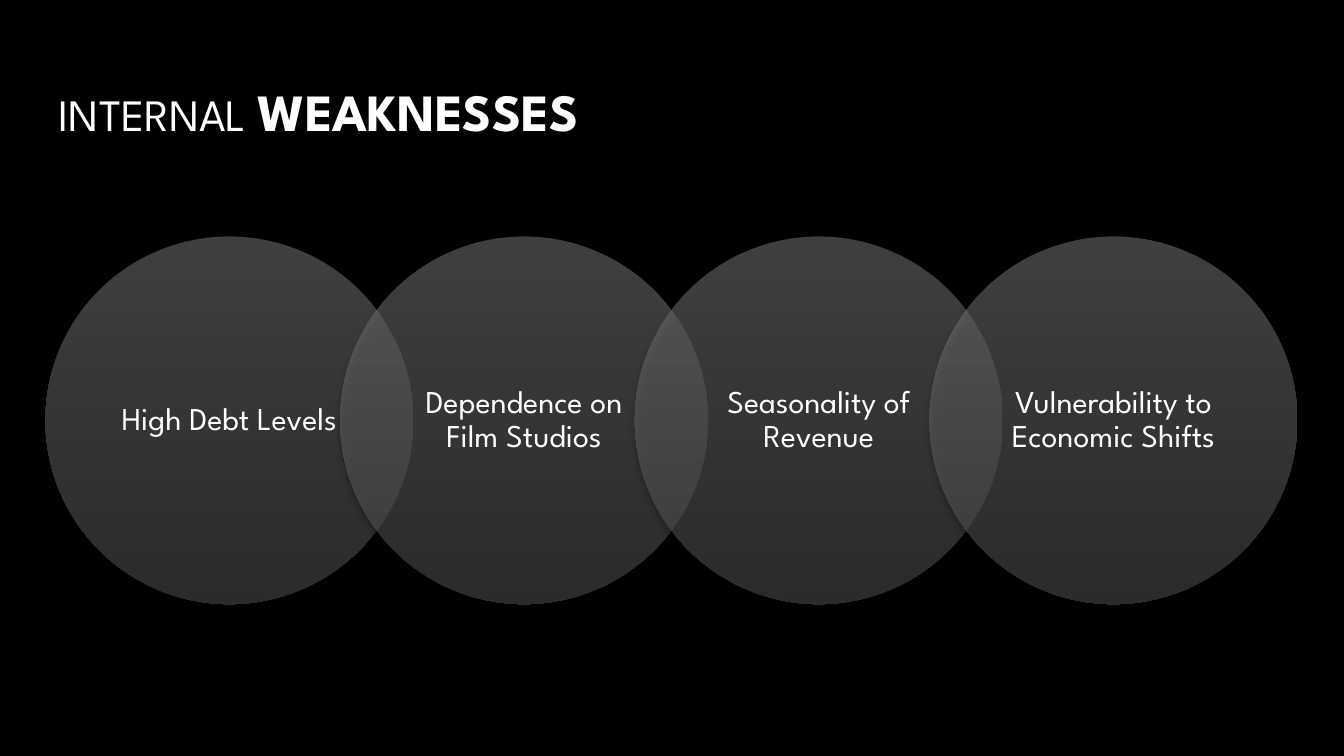
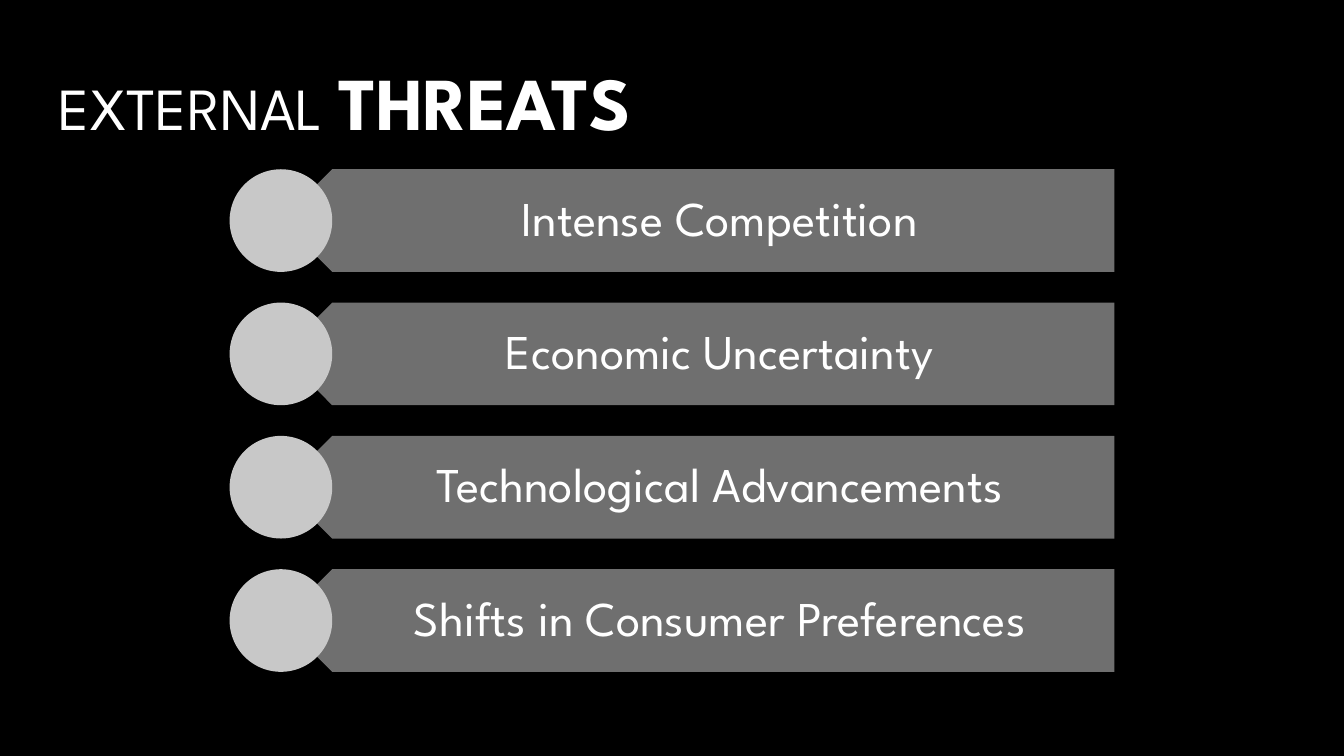
"""Build two dark slides on internal weaknesses and external threats."""
from lxml.etree import SubElement
from pptx import Presentation
from pptx.dml.color import RGBColor
from pptx.enum.shapes import MSO_SHAPE
from pptx.enum.text import MSO_ANCHOR, MSO_AUTO_SIZE, PP_ALIGN
from pptx.oxml.ns import qn
from pptx.util import Cm, Pt

FONT = "League Spartan"
BLACK = RGBColor(0x00, 0x00, 0x00)
WHITE = RGBColor(0xFF, 0xFF, 0xFF)
SILVER = RGBColor(0xA6, 0xA6, 0xA6)
CIRCLE_TOP = RGBColor(0x7E, 0x7E, 0x7E)
CIRCLE_BOTTOM = RGBColor(0x56, 0x56, 0x56)
BAR_GRAY = RGBColor(0x6F, 0x6F, 0x6F)
DOT_GRAY = RGBColor(0xC8, 0xC8, 0xC8)

WEAKNESSES = ["High Debt Levels", "Dependence on Film Studios",
              "Seasonality of Revenue", "Vulnerability to Economic Shifts"]
THREATS = ["Intense Competition", "Economic Uncertainty",
           "Technological Advancements", "Shifts in Consumer Preferences"]


def add_titled_slide(presentation, top, words):
    slide = presentation.slides.add_slide(presentation.slide_layouts[5])
    title = slide.shapes.title
    title.left, title.top, title.width, title.height = Cm(0.86), top, Cm(23.67), Cm(1.6)
    frame = title.text_frame
    frame.auto_size = MSO_AUTO_SIZE.NONE
    frame.vertical_anchor = MSO_ANCHOR.TOP
    frame.margin_left = frame.margin_right = Cm(0.25)
    frame.margin_top = frame.margin_bottom = Cm(0.25)
    paragraph = frame.paragraphs[0]
    paragraph.alignment = PP_ALIGN.LEFT
    for text, size, bold in words:
        run = paragraph.add_run()
        run.text = text
        run.font.name, run.font.size, run.font.bold = FONT, Pt(size), bold
        run.font.fill.gradient()
        run.font.fill.gradient_angle = 267
        for stop, color in zip(run.font.fill.gradient_stops, (WHITE, SILVER)):
            stop.color.rgb = color
    return slide


def write_label(shape, text, size, left, right, vertical):
    frame = shape.text_frame
    frame.word_wrap = True
    frame.vertical_anchor = MSO_ANCHOR.MIDDLE
    frame.margin_left, frame.margin_right = left, right
    frame.margin_top = frame.margin_bottom = vertical
    paragraph = frame.paragraphs[0]
    paragraph.alignment = PP_ALIGN.CENTER
    paragraph.line_spacing = 0.9
    run = paragraph.add_run()
    run.text = text
    run.font.name, run.font.size = FONT, Pt(size)
    run.font.color.rgb = WHITE


presentation = Presentation()
presentation.slide_width, presentation.slide_height = Cm(25.4), Cm(14.29)
background = presentation.slide_master.background.fill
background.solid()
background.fore_color.rgb = BLACK

slide = add_titled_slide(presentation, Cm(1.24),
                         [("INTERNAL ", 24, False), ("WEAKNESSES", 28, True)])
diameter, circle_top, label_inset = Cm(6.95), Cm(4.47), Cm(1.02)
label_side = diameter - 2 * label_inset
for index, weakness in enumerate(WEAKNESSES):
    left = Cm(0.86) + index * Cm(5.57)
    circle = slide.shapes.add_shape(MSO_SHAPE.OVAL, left, circle_top, diameter, diameter)
    circle.line.fill.background()
    circle.fill.gradient()
    circle.fill.gradient_angle = 270
    for stop, color in zip(circle.fill.gradient_stops, (CIRCLE_TOP, CIRCLE_BOTTOM)):
        stop.color.rgb = color
    for color in circle.fill._xPr.iter(qn("a:srgbClr")):
        SubElement(color, qn("a:alpha"), val="50000")
    circle.shadow.inherit = False
    effects = circle._element.spPr.find(qn("a:effectLst"))
    shadow = SubElement(effects, qn("a:outerShdw"), blurRad=str(Pt(4)),
                        dist=str(Pt(3)), dir="5400000", rotWithShape="0")
    shadow_color = SubElement(shadow, qn("a:srgbClr"), val=str(BLACK))
    SubElement(shadow_color, qn("a:alpha"), val="60000")
    label = slide.shapes.add_textbox(left + label_inset, circle_top + label_inset,
                                     label_side, label_side)
    write_label(label, weakness, 17, Cm(0.38), Cm(0.38), Cm(0.05))

slide = add_titled_slide(presentation, Cm(0.81),
                         [("EXTERNAL ", 32, False), ("THREATS", 40, True)])
bar_height, bar_left, bar_right = Cm(1.94), Cm(5.31), Cm(21.06)
half = bar_height // 2
for index, threat in enumerate(THREATS):
    top = Cm(3.2) + index * Cm(2.52)
    bottom = top + bar_height
    outline = slide.shapes.build_freeform(bar_right, bottom)
    outline.add_line_segments([(bar_left + half, bottom), (bar_left, top + half),
                               (bar_left + half, top), (bar_right, top)])
    bar = outline.convert_to_shape()
    dot = slide.shapes.add_shape(MSO_SHAPE.OVAL, bar_left - half, top,
                                 bar_height, bar_height)
    for shape, color in ((bar, BAR_GRAY), (dot, DOT_GRAY)):
        shape.shadow.inherit = False
        shape.fill.solid()
        shape.fill.fore_color.rgb = color
        shape.line.fill.background()
    write_label(bar, threat, 26, Cm(1.35), Cm(0.5), Cm(0.28))

presentation.save("out.pptx")
